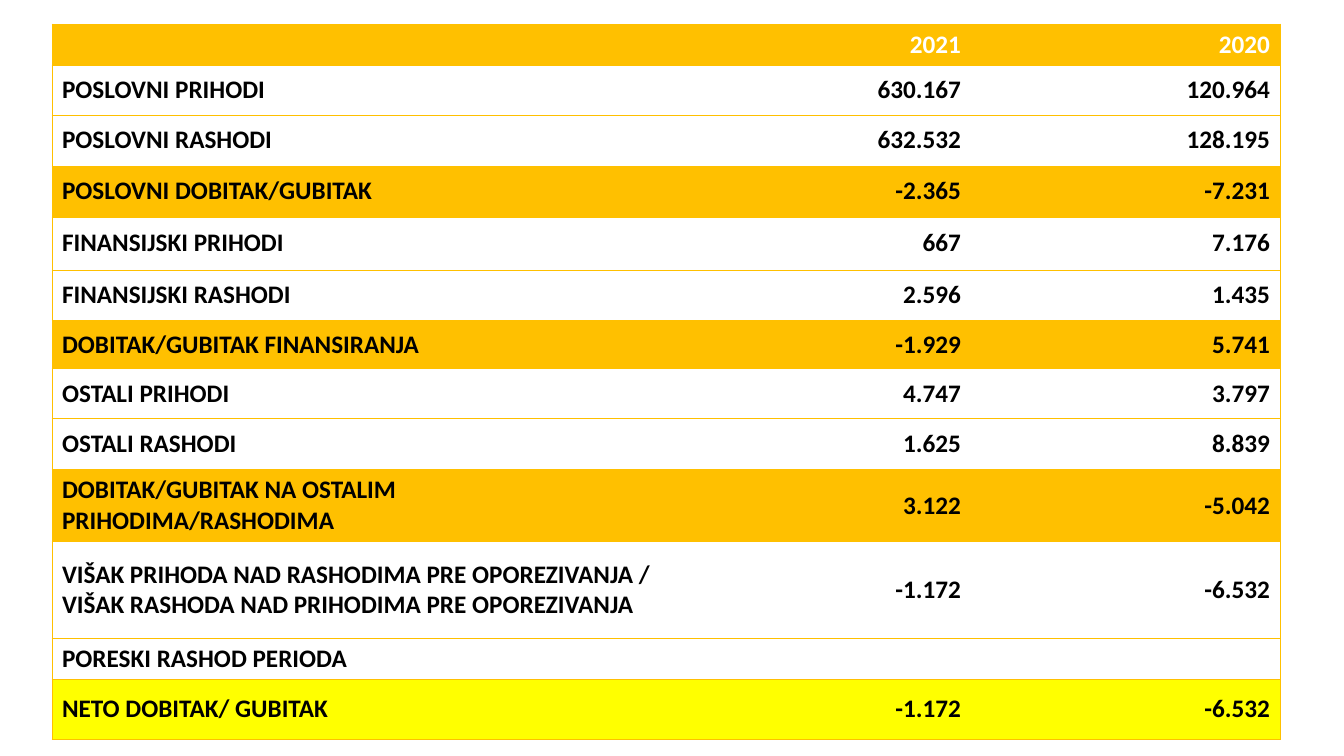
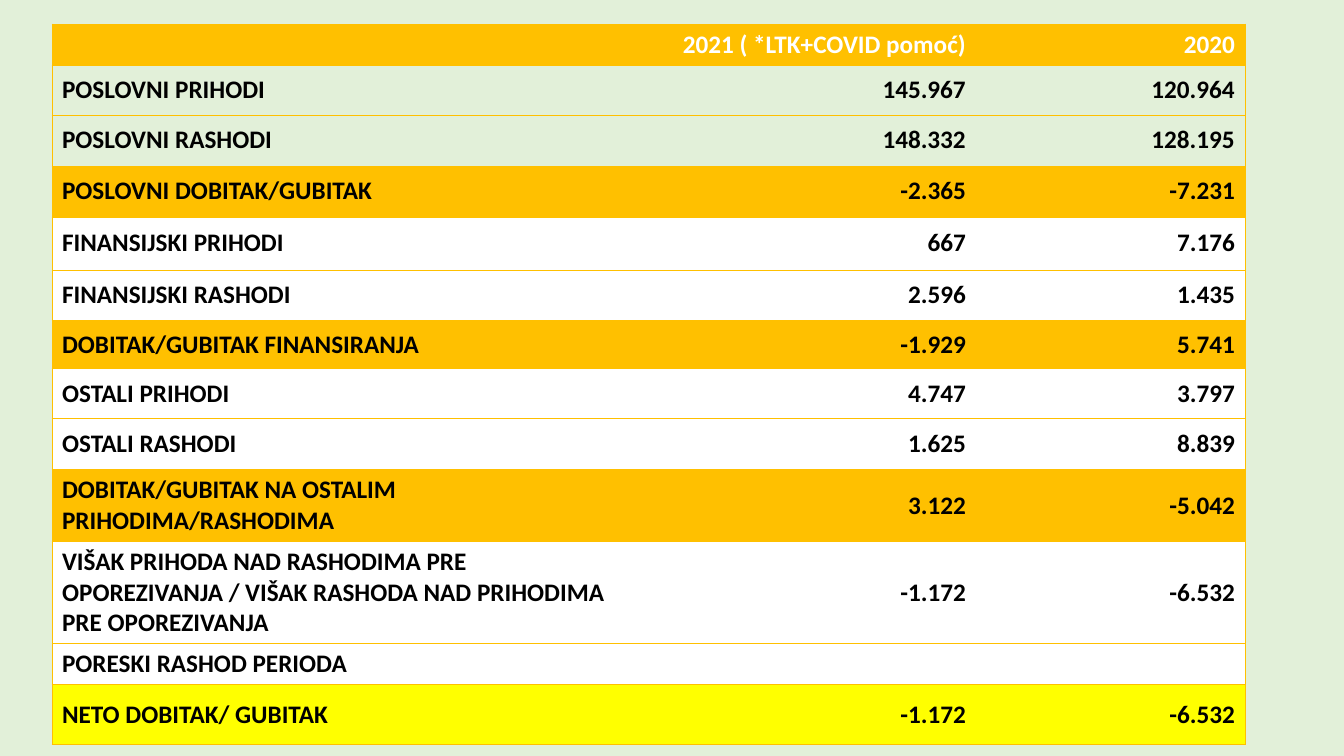
import lxml.etree
import pptx
import pptx.dml.color
import pptx.enum.text
import pptx.oxml.ns
import pptx.util

PX = 12192000 / 1344
COLOURS = {
    "gold": "FFC000",
    "yellow": "FFFF00",
    "white": "FFFFFF",
    "black": "000000",
    "mint": "E2F0D9",
}
FONT = {"name": "Calibri", "size": pptx.util.Pt(18), "bold": True}
PLAIN_TABLE_STYLE = "{2D5ABB26-0587-4C30-8999-92F81FD0307C}"
TABLE_LEFT, TABLE_TOP = 52, 24

# label, 2021, 2020, fill (None lets the background through), height
SHARED_ROWS = [
    ("POSLOVNI DOBITAK/GUBITAK", "-2.365", "-7.231", "gold", 51),
    ("FINANSIJSKI PRIHODI", "667", "7.176", "white", 53),
    ("FINANSIJSKI RASHODI", "2.596", "1.435", "white", 51),
    ("DOBITAK/GUBITAK FINANSIRANJA", "-1.929", "5.741", "gold", 48),
    ("OSTALI PRIHODI", "4.747", "3.797", "white", 50),
    ("OSTALI RASHODI", "1.625", "8.839", "white", 51),
    ("DOBITAK/GUBITAK NA OSTALIM PRIHODIMA/RASHODIMA", "3.122", "-5.042", "gold", 68),
    ("VIŠAK PRIHODA NAD RASHODIMA PRE OPOREZIVANJA / "
     "VIŠAK RASHODA NAD PRIHODIMA PRE OPOREZIVANJA", "-1.172", "-6.532", "white", 97),
    ("PORESKI RASHOD PERIODA", "", "", "white", 40),
    ("NETO DOBITAK/ GUBITAK", "-1.172", "-6.532", "yellow", 60),
]


def px(length):
    return pptx.util.Emu(round(length * PX))


def rgb(colour):
    return pptx.dml.color.RGBColor.from_string(COLOURS[colour])


def income_rows(heading, income, expenses):
    """Return all table rows, given the 2021 entries that vary by slide."""
    return [
        ("", heading, "2020", "gold", 40),
        ("POSLOVNI PRIHODI", income, "120.964", None, 50),
        ("POSLOVNI RASHODI", expenses, "128.195", None, 51),
        *SHARED_ROWS,
    ]


def fill_cell(cell, colour):
    if colour:
        cell.fill.solid()
        cell.fill.fore_color.rgb = rgb(colour)
    else:
        cell.fill.background()


def border_cell(cell, sides):
    """Draw gold lines on the given sides, a subset of "LRTB" in that order."""
    properties = cell._tc.get_or_add_tcPr()
    for position, side in enumerate(sides):
        line = lxml.etree.Element(
            pptx.oxml.ns.qn(f"a:ln{side}"), w=str(pptx.util.Pt(0.5)))
        solid = lxml.etree.SubElement(line, pptx.oxml.ns.qn("a:solidFill"))
        lxml.etree.SubElement(
            solid, pptx.oxml.ns.qn("a:srgbClr"), val=COLOURS["gold"])
        properties.insert(position, line)


def write_cell(cell, text, colour, align):
    cell.vertical_anchor = pptx.enum.text.MSO_ANCHOR.MIDDLE
    para = cell.text_frame.paragraphs[0]
    para.alignment = align
    if text:
        span = para.add_run()
        span.text = text
        for name, value in FONT.items():
            setattr(span.font, name, value)
        span.font.color.rgb = rgb(colour)


def add_income_table(page, widths, rows):
    frame = page.shapes.add_table(
        len(rows), len(widths), px(TABLE_LEFT), px(TABLE_TOP),
        px(sum(widths)), px(sum(row[-1] for row in rows)))
    table = frame.table
    table.first_row = table.horz_banding = False
    table._tbl.tblPr.find(pptx.oxml.ns.qn("a:tableStyleId")).text = PLAIN_TABLE_STYLE
    for column, width in zip(table.columns, widths):
        column.width = px(width)
    last = len(widths) - 1
    for row_index, (*texts, fill, height) in enumerate(rows):
        table.rows[row_index].height = px(height)
        text_colour = "black" if row_index else "white"
        for column_index, text in enumerate(texts):
            cell = table.cell(row_index, column_index)
            align = pptx.enum.text.PP_ALIGN.RIGHT if column_index else pptx.enum.text.PP_ALIGN.LEFT
            fill_cell(cell, fill)
            border_cell(cell, {0: "LTB", last: "RTB"}.get(column_index, "TB"))
            write_cell(cell, text, text_colour, align)


def add_page(deck, background, widths, rows):
    page = deck.slides.add_slide(deck.slide_layouts.get_by_name("Blank"))
    page.background.fill.solid()
    page.background.fill.fore_color.rgb = rgb(background)
    add_income_table(page, widths, rows)


def main():
    deck = pptx.Presentation()
    deck.slide_width, deck.slide_height = px(1344), px(756)
    add_page(deck, "white", (621, 298, 309),
             income_rows("2021", "630.167", "632.532"))
    add_page(deck, "mint", (604, 320, 269),
             income_rows("2021 ( *LTK+COVID pomoć)", "145.967", "148.332"))
    deck.save("out.pptx")


if __name__ == "__main__":
    main()
